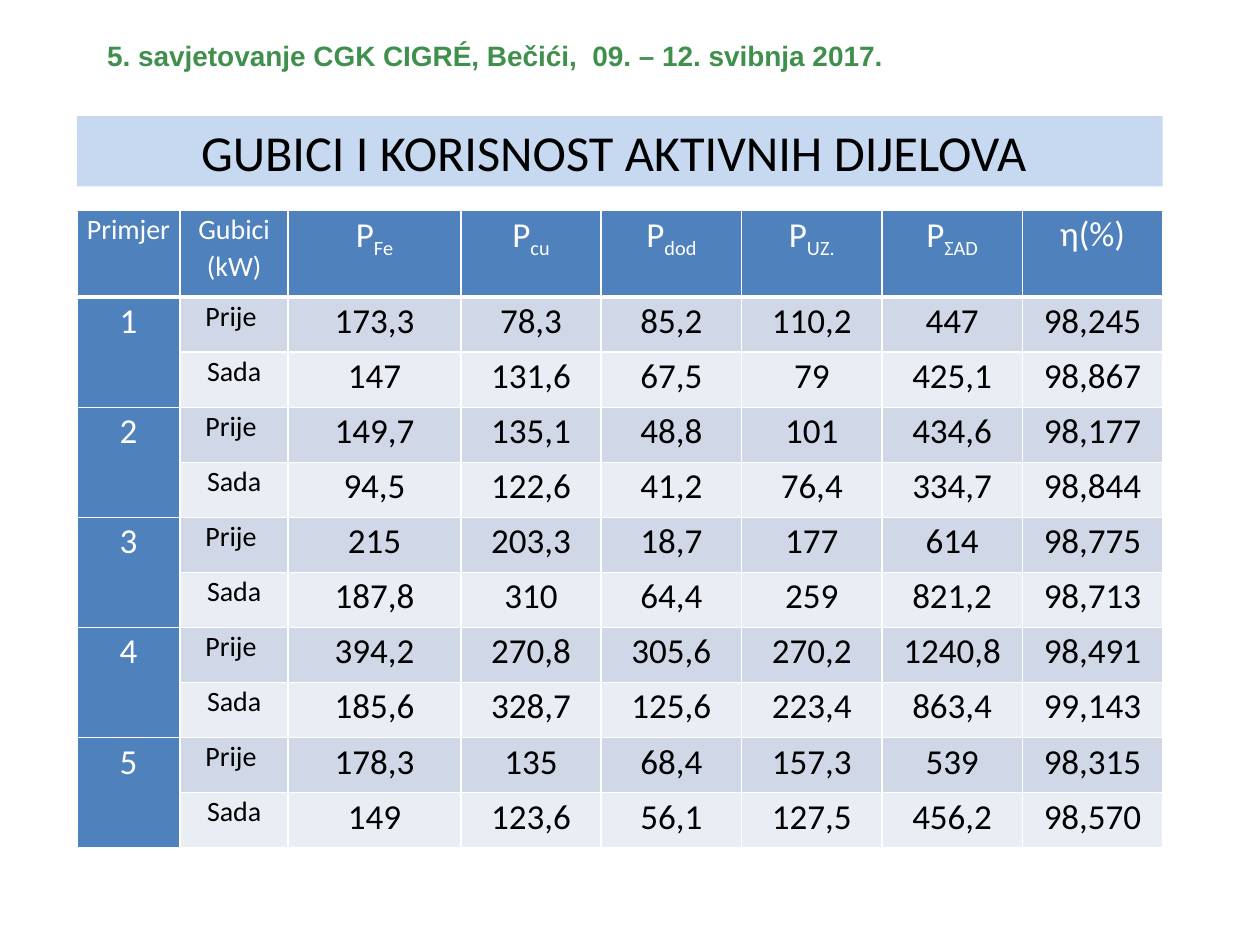
from lxml import etree
from pptx import Presentation
from pptx.dml.color import RGBColor
from pptx.enum.shapes import MSO_SHAPE
from pptx.enum.text import MSO_ANCHOR, PP_ALIGN
from pptx.oxml.ns import qn
from pptx.util import Cm, Pt

RECTANGLE = MSO_SHAPE.RECTANGLE
MIDDLE = MSO_ANCHOR.MIDDLE
LEFT = PP_ALIGN.LEFT
CENTER = PP_ALIGN.CENTER

WHITE = RGBColor(0xFF, 0xFF, 0xFF)
BLACK = RGBColor(0x00, 0x00, 0x00)
GREEN = RGBColor(0x40, 0x90, 0x4D)
TITLE_BLUE = RGBColor(0xC6, 0xD9, 0xF1)
HEADER_BLUE = RGBColor(0x4F, 0x81, 0xBD)
BEFORE_BLUE = RGBColor(0xD0, 0xD8, 0xE8)
NOW_BLUE = RGBColor(0xE9, 0xED, 0xF4)

CONFERENCE = {"name": "Arial", "size": Pt(16), "bold": True}
TITLE = {"name": "Calibri", "size": Pt(28.8), "bold": False}
LABEL = {"name": "Calibri", "size": Pt(16), "bold": False}
VALUE = {"name": "Calibri", "size": Pt(20), "bold": False}

COLUMN_WIDTHS = [2.08, 2.18, 3.48] + [2.83] * 5
HEADER_HEIGHT = 1.75
ROW_HEIGHT = 1.11
HEADERS = [
    ("Primjer", "", LABEL),
    ("Gubici (kW)", "", LABEL),
    ("P", "Fe", VALUE),
    ("P", "cu", VALUE),
    ("P", "dod", VALUE),
    ("P", "UZ.", VALUE),
    ("P", "ΣAD", VALUE),
    ("η(%)", "", VALUE),
]
LOSSES = [
    ("173,3", "78,3", "85,2", "110,2", "447", "98,245"),
    ("147", "131,6", "67,5", "79", "425,1", "98,867"),
    ("149,7", "135,1", "48,8", "101", "434,6", "98,177"),
    ("94,5", "122,6", "41,2", "76,4", "334,7", "98,844"),
    ("215", "203,3", "18,7", "177", "614", "98,775"),
    ("187,8", "310", "64,4", "259", "821,2", "98,713"),
    ("394,2", "270,8", "305,6", "270,2", "1240,8", "98,491"),
    ("185,6", "328,7", "125,6", "223,4", "863,4", "99,143"),
    ("178,3", "135", "68,4", "157,3", "539", "98,315"),
    ("149", "123,6", "56,1", "127,5", "456,2", "98,570"),
]
PERIODS = [("Prije ", BEFORE_BLUE), ("Sada", NOW_BLUE)]


class SlideBuilder:
    def __init__(self, slide):
        self.slide = slide
        self.border_color = WHITE
        self.cell_format = {
            "margin_left": Cm(0.15),
            "margin_right": Cm(0.15),
            "margin_top": Cm(0),
            "margin_bottom": Cm(0),
        }

    def run(self, paragraph, text, style, color):
        run = paragraph.add_run()
        run.text = text
        for name, value in style.items():
            setattr(run.font, name, value)
        run.font.color.rgb = color
        return run

    def box(self, bounds, text, style, color, fill, alignment):
        shape = self.slide.shapes.add_shape(RECTANGLE, *map(Cm, bounds))
        shape.shadow.inherit = False
        shape.fill.solid()
        shape.fill.fore_color.rgb = fill
        shape.line.fill.background()
        shape.text_frame.word_wrap = True
        shape.text_frame.vertical_anchor = MIDDLE
        paragraph = shape.text_frame.paragraphs[0]
        paragraph.alignment = alignment
        self.run(paragraph, text, style, color)

    def table(self, left, top, widths, heights):
        frame = self.slide.shapes.add_table(
            len(heights), len(widths), Cm(left), Cm(top),
            Cm(sum(widths)), Cm(sum(heights)),
        )
        table = frame.table
        for column, width in zip(table.columns, widths):
            column.width = Cm(width)
        for row, height in zip(table.rows, heights):
            row.height = Cm(height)
        return table

    def borders(self, cell, bottom):
        properties = cell._tc.get_or_add_tcPr()
        for side, width in (("L", 1), ("R", 1), ("T", 1), ("B", bottom)):
            line = etree.SubElement(properties, qn(f"a:ln{side}"), w=str(Pt(width)))
            fill = etree.SubElement(line, qn("a:solidFill"))
            etree.SubElement(fill, qn("a:srgbClr"), val=str(self.border_color))

    def cell(self, cell, text, style, color, fill, subscript="", bottom=1):
        self.borders(cell, bottom)
        cell.fill.solid()
        cell.fill.fore_color.rgb = fill
        for name, value in self.cell_format.items():
            setattr(cell, name, value)
        paragraph = cell.text_frame.paragraphs[0]
        paragraph.alignment = CENTER
        paragraph.line_spacing = 1.07
        if text:
            self.run(paragraph, text, style, color)
        if subscript:
            run = self.run(paragraph, subscript, style, color)
            run.font._element.set("baseline", "-25000")


def main():
    presentation = Presentation()
    presentation.slide_width = Cm(25.4)
    presentation.slide_height = Cm(19.05)
    slide = presentation.slides.add_slide(presentation.slide_layouts[6])
    builder = SlideBuilder(slide)

    builder.box((1.91, 0.64, 18.85, 0.94),
                "5. savjetovanje CGK CIGRÉ, Bečići,  09. – 12. svibnja 2017.",
                CONFERENCE, GREEN, WHITE, LEFT)
    builder.box((1.55, 2.34, 21.89, 1.42), "GUBICI I KORISNOST AKTIVNIH DIJELOVA ",
                TITLE, BLACK, TITLE_BLUE, CENTER)

    heights = [HEADER_HEIGHT] + [ROW_HEIGHT] * len(LOSSES)
    table = builder.table(1.55, 4.24, COLUMN_WIDTHS, heights)
    for column, (text, subscript, style) in enumerate(HEADERS):
        builder.cell(table.cell(0, column), text, style, WHITE, HEADER_BLUE,
                     subscript, bottom=3)

    for index, values in enumerate(LOSSES):
        row = index + 1
        example, period = divmod(index, len(PERIODS))
        label, fill = PERIODS[period]
        number = "" if period else str(example + 1)
        builder.cell(table.cell(row, 0), number, VALUE, WHITE, HEADER_BLUE)
        builder.cell(table.cell(row, 1), label, LABEL, BLACK, fill)
        for column, value in enumerate(values, 2):
            builder.cell(table.cell(row, column), value, VALUE, BLACK, fill)
        if period:
            table.cell(row - 1, 0).merge(table.cell(row, 0))

    presentation.save("out.pptx")


if __name__ == "__main__":
    main()
